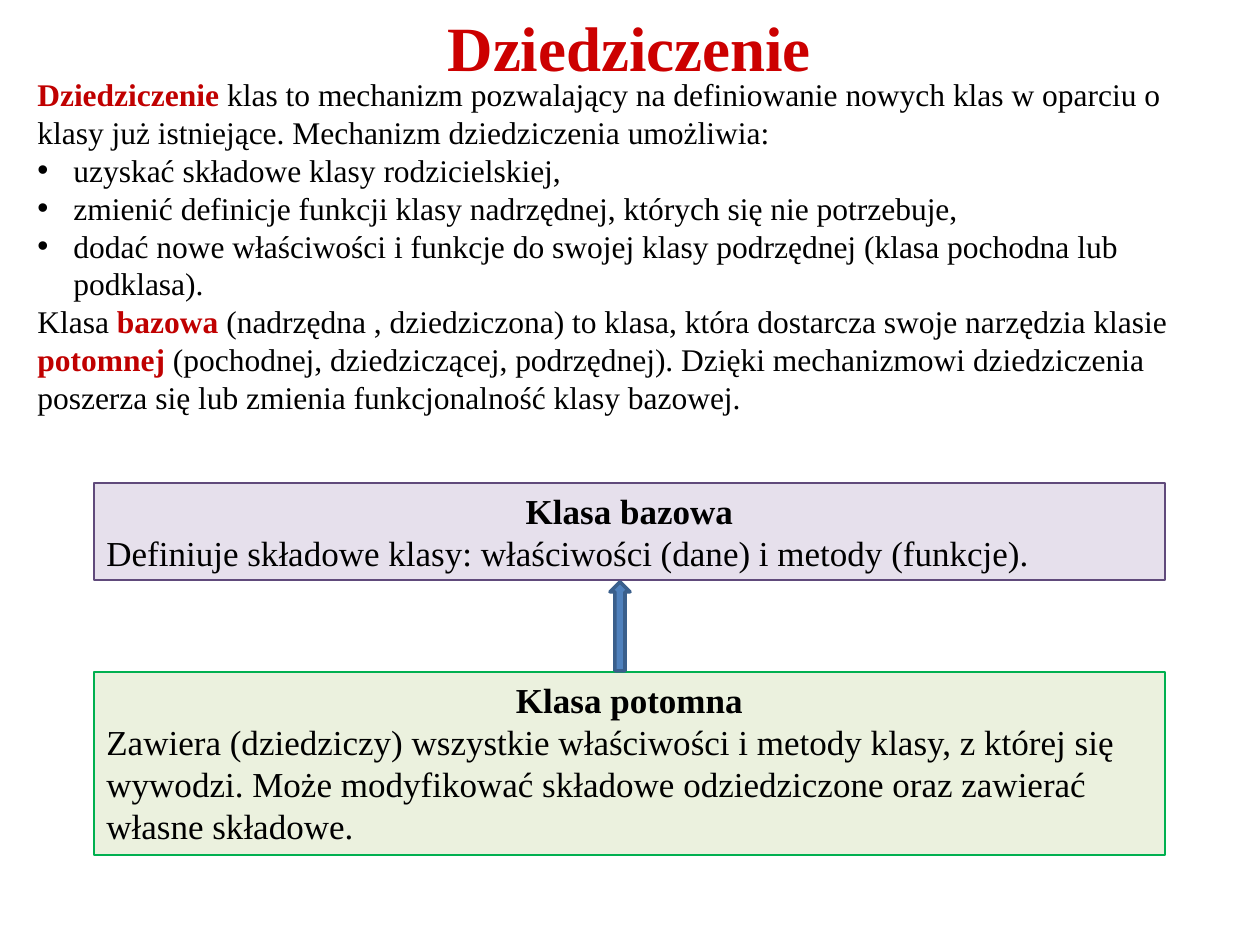
from pptx import Presentation
from pptx.dml.color import RGBColor
from pptx.enum.shapes import MSO_SHAPE
from pptx.enum.text import MSO_ANCHOR, MSO_AUTO_SIZE, PP_ALIGN
from pptx.oxml.ns import qn
from pptx.util import Emu, Pt
from lxml.etree import SubElement

PX = 914400 // 126
FONT = "Times New Roman"
HEX = {
    "title": "CC0000", "key": "C00000", "text": "000000",
    "base": "E6E0EC", "base_line": "604A7B",
    "child": "EBF1DE", "child_line": "00B050",
    "arrow": "4F81BD", "arrow_line": "3A5F8C",
}
TITLE = "Dziedziczenie"
BODY = [
    (False, [("Dziedziczenie", True),
             (" klas to mechanizm pozwalający na definiowanie nowych klas w oparciu o "
              "klasy już istniejące. Mechanizm dziedziczenia umożliwia:", False)]),
    (True, [("uzyskać składowe klasy rodzicielskiej,", False)]),
    (True, [("zmienić definicje funkcji klasy nadrzędnej, których się nie potrzebuje,", False)]),
    (True, [("dodać nowe właściwości i funkcje do swojej klasy podrzędnej "
             "(klasa pochodna lub podklasa).", False)]),
    (False, [("Klasa ", False), ("bazowa ", True),
             ("(nadrzędna , dziedziczona) to klasa, która dostarcza swoje narzędzia klasie ", False),
             ("potomnej", True),
             (" (pochodnej, dziedziczącej, podrzędnej). Dzięki mechanizmowi dziedziczenia "
              "poszerza się lub zmienia funkcjonalność klasy bazowej.", False)]),
]
BOXES = [
    ("base", 483, 97, "Klasa bazowa",
     "Definiuje składowe klasy: właściwości (dane) i metody (funkcje)."),
    ("child", 672, 183, "Klasa potomna",
     "Zawiera (dziedziczy) wszystkie właściwości i metody klasy, z której się wywodzi. "
     "Może modyfikować składowe odziedziczone oraz zawierać własne składowe."),
]


def place(*px):
    return [Emu(n * PX) for n in px]


def color(key):
    return RGBColor.from_string(HEX[key])


def style(run, size, key="text", bold=False):
    font = run.font
    font.name, font.size, font.bold = FONT, Pt(size), bold
    font.color.rgb = color(key)


def setup(frame, anchor, grow=True):
    frame.word_wrap = True
    frame.vertical_anchor = anchor
    frame.auto_size = MSO_AUTO_SIZE.SHAPE_TO_FIT_TEXT if grow else MSO_AUTO_SIZE.NONE
    return frame


def bullet(para):
    props = para._p.get_or_add_pPr()
    props.set("marL", str(36 * PX))
    props.set("indent", str(-36 * PX))
    SubElement(props, qn("a:buFont"), typeface="Arial")
    SubElement(props, qn("a:buChar"), char="•")


def draw(slide, kind, box, key, width):
    shape = slide.shapes.add_shape(kind, *place(*box))
    shape.shadow.inherit = False
    shape.fill.solid()
    shape.fill.fore_color.rgb = color(key)
    shape.line.color.rgb = color(key + "_line")
    shape.line.width = Pt(width)
    return shape


def main():
    deck = Presentation()
    deck.slide_width, deck.slide_height = place(1260, 945)
    slide = deck.slides.add_slide(deck.slide_layouts[6])

    title = slide.shapes.add_textbox(*place(94, 17, 1071, 59))
    frame = setup(title.text_frame, MSO_ANCHOR.MIDDLE, False)
    frame.text = TITLE
    frame.paragraphs[0].alignment = PP_ALIGN.CENTER
    style(frame.paragraphs[0].runs[0], 36, "title", True)

    body = slide.shapes.add_textbox(*place(25, 67, 1201, 357))
    frame = setup(body.text_frame, MSO_ANCHOR.MIDDLE)
    for i, (dot, parts) in enumerate(BODY):
        para = frame.add_paragraph() if i else frame.paragraphs[0]
        if dot:
            bullet(para)
        for text, key in parts:
            run = para.add_run()
            run.text = text
            style(run, 18, "key" if key else "text", key)

    for key, top, high, head, text in BOXES:
        shape = draw(slide, MSO_SHAPE.RECTANGLE, (94, top, 1071, high), key, 0.75)
        frame = setup(shape.text_frame, MSO_ANCHOR.TOP)
        frame.text = head + "\n" + text
        for i, para in enumerate(frame.paragraphs):
            para.alignment = PP_ALIGN.LEFT if i else PP_ALIGN.CENTER
            style(para.runs[0], 20, bold=not i)

    draw(slide, MSO_SHAPE.UP_ARROW, (610, 582, 20, 89), "arrow", 2)
    deck.save("out.pptx")


if __name__ == "__main__":
    main()
